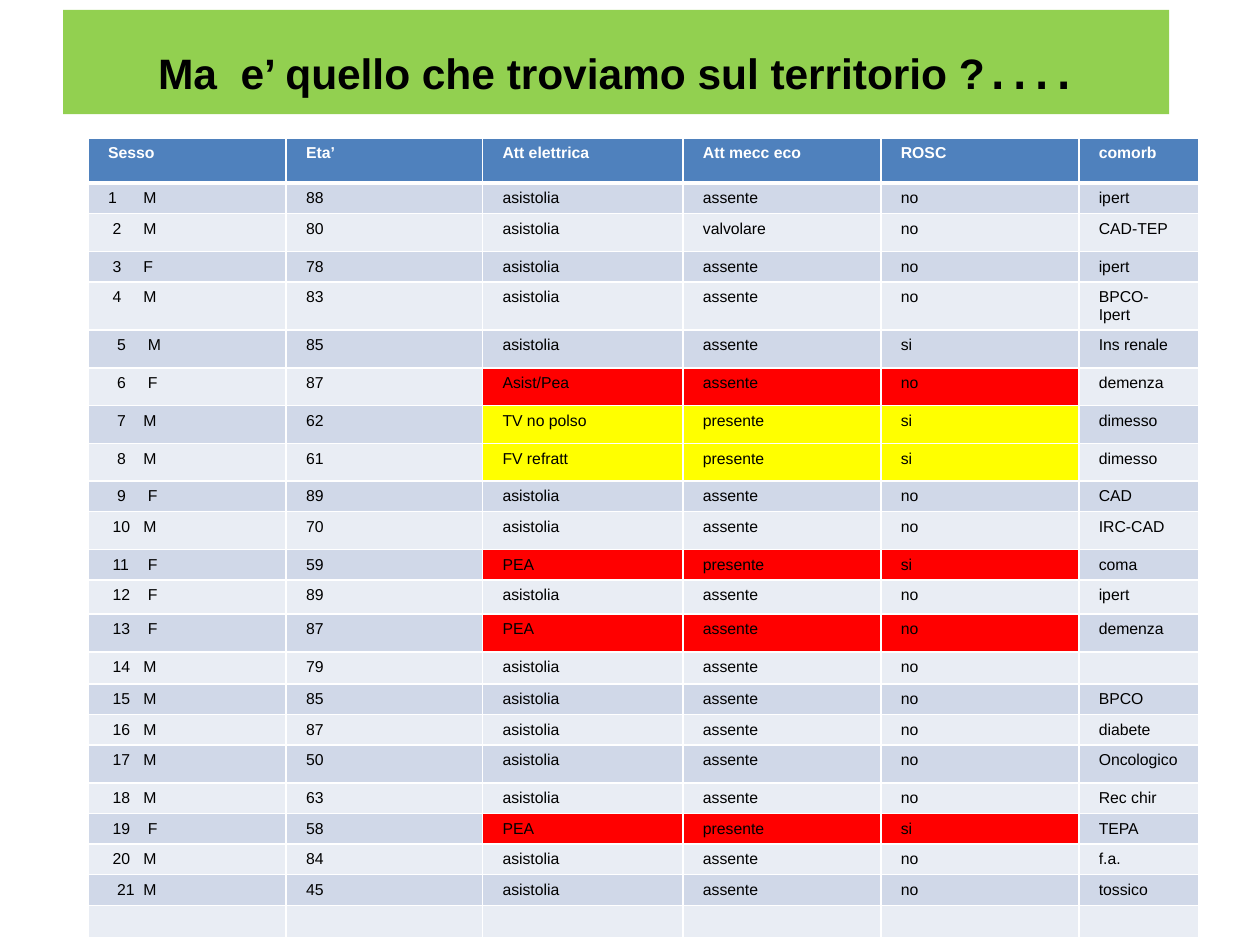
import dataclasses

import lxml.etree
import pptx
import pptx.dml.color
import pptx.enum.text
import pptx.oxml.ns
import pptx.util

Cm = pptx.util.Cm
Pt = pptx.util.Pt
qn = pptx.oxml.ns.qn


@dataclasses.dataclass(frozen=True)
class Theme:
    font: str = "Arial"
    title_size: float = 24.3
    dots_size: float = 39.6
    cell_size: float = 9
    black: str = "000000"
    white: str = "FFFFFF"
    banner: str = "92D050"
    header: str = "4F81BD"
    bands: tuple = ("E9EDF4", "D0D8E8")
    red: str = "FF0000"
    yellow: str = "FFFF00"


THEME = Theme()
HEADER = ("Sesso", "Eta’", "Att elettrica", "Att mecc eco", "ROSC", "comorb")
PATIENTS = [
    ("M", "88", "asistolia", "assente", "no", "ipert"),
    ("M", "80", "asistolia", "valvolare", "no", "CAD-TEP"),
    ("F", "78", "asistolia", "assente", "no", "ipert"),
    ("M", "83", "asistolia", "assente", "no", "BPCO-Ipert"),
    ("M", "85", "asistolia", "assente", "si", "Ins renale"),
    ("F", "87", "Asist/Pea", "assente", "no", "demenza"),
    ("M", "62", "TV no polso", "presente", "si", "dimesso"),
    ("M", "61", "FV refratt", "presente", "si", "dimesso"),
    ("F", "89", "asistolia", "assente", "no", "CAD"),
    ("M", "70", "asistolia", "assente", "no", "IRC-CAD"),
    ("F", "59", "PEA", "presente", "si", "coma"),
    ("F", "89", "asistolia", "assente", "no", "ipert"),
    ("F", "87", "PEA", "assente", "no", "demenza"),
    ("M", "79", "asistolia", "assente", "no", ""),
    ("M", "85", "asistolia", "assente", "no", "BPCO"),
    ("M", "87", "asistolia", "assente", "no", "diabete"),
    ("M", "50", "asistolia", "assente", "no", "Oncologico"),
    ("M", "63", "asistolia", "assente", "no", "Rec chir"),
    ("F", "58", "PEA", "presente", "si", "TEPA"),
    ("M", "84", "asistolia", "assente", "no", "f.a."),
    ("M", "45", "asistolia", "assente", "no", "tossico"),
]
COLUMN_WIDTHS = (3.99, 3.96, 4.04, 3.99, 3.99, 2.41)
LOW_ROW, TALL_ROW = 0.54, 0.76
TALL_ROWS = {2, 4, 5, 6, 7, 8, 10, 13, 17}
SPECIAL_HEIGHTS = {0: 0.91, 12: 0.69}
HIGHLIGHTS = {
    **dict.fromkeys((6, 11, 13, 19), THEME.red),
    **dict.fromkeys((7, 8), THEME.yellow),
}
HIGHLIGHT_COLUMNS = range(2, 5)
WIDE_GAP_ROWS = {5, 6, 9, 11, 12, 13, 19}


def number_indent(row):
    if row == 1:
        return 0
    return 0.18 if row in {5, 6, 7, 8, 9, 21} else 0.09


class SlideBuilder:
    def __init__(self, prs, theme):
        self.theme = theme
        self.s = prs.slides.add_slide(prs.slide_layouts[5])

    def color(self, value):
        return pptx.dml.color.RGBColor.from_string(value)

    def fill(self, target, value):
        target.fill.solid()
        target.fill.fore_color.rgb = self.color(value)

    def run(self, p, text, size, color, bold=False):
        r = p.add_run()
        r.text = text
        r.font.name = self.theme.font
        r.font.size = Pt(size)
        r.font.bold = bold
        r.font.color.rgb = self.color(color)

    def title(self, text, dots, left, top, width, height):
        sp = self.s.shapes.title
        sp.left, sp.top, sp.width, sp.height = map(Cm, (left, top, width, height))
        self.fill(sp, self.theme.banner)
        tf = sp.text_frame
        tf.word_wrap = True
        tf.auto_size = pptx.enum.text.MSO_AUTO_SIZE.NONE
        tf.vertical_anchor = pptx.enum.text.MSO_ANCHOR.MIDDLE
        p = tf.paragraphs[0]
        p.alignment = pptx.enum.text.PP_ALIGN.CENTER
        self.run(p, text, self.theme.title_size, self.theme.black, True)
        self.run(p, dots, self.theme.dots_size, self.theme.black)

    def borders(self, cell, widths):
        tcPr = cell._tc.get_or_add_tcPr()
        for side, width in widths.items():
            ln = lxml.etree.SubElement(tcPr, qn("a:ln" + side), w=str(Pt(width)))
            paint = lxml.etree.SubElement(ln, qn("a:solidFill"))
            lxml.etree.SubElement(paint, qn("a:srgbClr"), val=self.theme.white)

    def hang(self, p, start, stop):
        pPr = p._p.get_or_add_pPr()
        pPr.set("marL", str(Cm(stop)))
        pPr.set("indent", str(Cm(start) - Cm(stop)))

    def cell(self, cell, text, fill, header):
        cell.margin_left = cell.margin_right = Cm(0.4)
        cell.margin_top = cell.margin_bottom = Cm(0.13)
        self.borders(cell, {"L": 1, "R": 1, "T": 1, "B": 3 if header else 1})
        self.fill(cell, fill)
        p = cell.text_frame.paragraphs[0]
        if text:
            color = self.theme.white if header else self.theme.black
            self.run(p, text, self.theme.cell_size, color, header)
        else:
            size = str(round(self.theme.cell_size * 100))
            lxml.etree.SubElement(p._p, qn("a:endParaRPr"), sz=size)
        return p

    def table(self, rows, left, top):
        heights = [
            SPECIAL_HEIGHTS.get(i, TALL_ROW if i in TALL_ROWS else LOW_ROW)
            for i in range(len(rows))
        ]
        table = self.s.shapes.add_table(
            len(rows), len(COLUMN_WIDTHS), Cm(left), Cm(top),
            Cm(sum(COLUMN_WIDTHS)), Cm(sum(heights)),
        ).table
        for column, width in zip(table.columns, COLUMN_WIDTHS):
            column.width = Cm(width)
        for i, values in enumerate(rows):
            table.rows[i].height = Cm(heights[i])
            band = self.theme.bands[i % 2] if i else self.theme.header
            for j, text in enumerate(values):
                fill = HIGHLIGHTS.get(i, band) if j in HIGHLIGHT_COLUMNS else band
                p = self.cell(table.cell(i, j), text, fill, i == 0)
                if "\t" in text:
                    self.hang(p, number_indent(i), 0.8 if i in WIDE_GAP_ROWS else 0.71)


def main():
    prs = pptx.Presentation()
    prs.slide_width, prs.slide_height = Cm(25.4), Cm(19.05)
    slide = SlideBuilder(prs, THEME)
    slide.title("Ma  e’ quello che troviamo sul territorio ?", "….", 1.27, 0.2, 22.3, 2.1)
    numbered = [
        (f"{number}\t{sex}", *rest)
        for number, (sex, *rest) in enumerate(PATIENTS, 1)
    ]
    slide.table([HEADER, *numbered, ("",) * len(HEADER)], 1.78, 2.78)
    prs.save("out.pptx")


if __name__ == "__main__":
    main()
